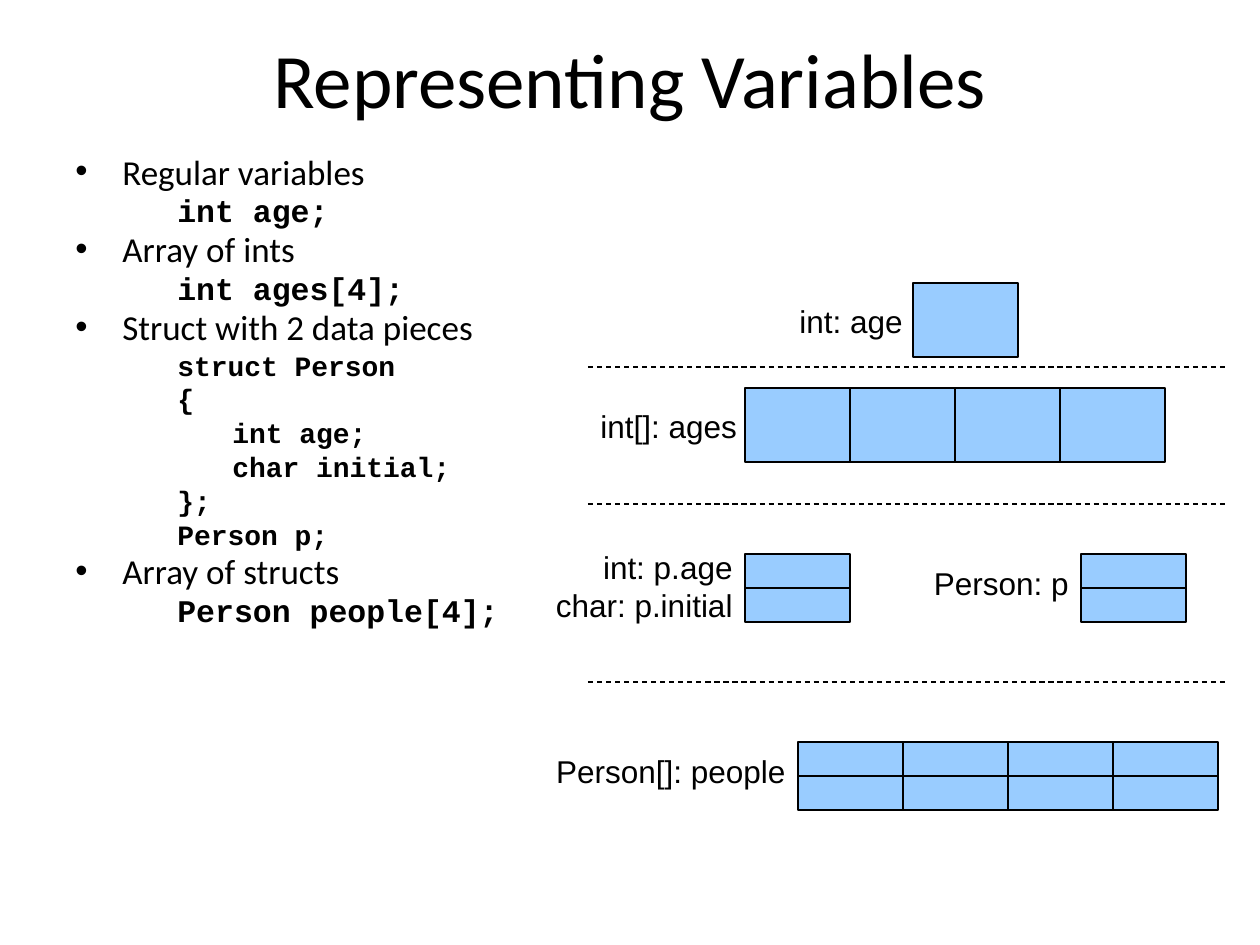
"""Build a slide that pairs variable declarations with their memory layout."""
from lxml import etree
from pptx import Presentation
from pptx.dml.color import RGBColor
from pptx.enum.dml import MSO_LINE
from pptx.enum.shapes import MSO_CONNECTOR, MSO_SHAPE
from pptx.enum.text import MSO_ANCHOR, PP_ALIGN
from pptx.oxml.ns import qn
from pptx.util import Pt

LEFT, RIGHT, CENTER = PP_ALIGN.LEFT, PP_ALIGN.RIGHT, PP_ALIGN.CENTER
MIDDLE, TOP = MSO_ANCHOR.MIDDLE, MSO_ANCHOR.TOP
RECTANGLE, STRAIGHT, DASH = MSO_SHAPE.RECTANGLE, MSO_CONNECTOR.STRAIGHT, MSO_LINE.DASH
PX = 914400 // 126
COLORS = {"text": "000000", "cell": "99CCFF", "line": "000000"}

TITLE = "Representing Variables"
TITLE_BOX = (63, 29, 1134, 97)
OUTLINE_BOX = (63, 152, 1134, 692)
OUTLINE = [
    ("topic", "Regular variables"),
    ("code", "int age;"),
    ("topic", "Array of ints"),
    ("code", "int ages[4];"),
    ("topic", "Struct with 2 data pieces"),
    ("struct", "struct Person"),
    ("struct", "{"),
    ("member", "int age;"),
    ("member", "char initial;"),
    ("struct", "};"),
    ("struct", "Person p;"),
    ("topic", "Array of structs"),
    ("code", "Person people[4];"),
]
STYLES = {
    "topic": dict(size=20, font="Calibri", margin=47, bullet="•"),
    "code": dict(size=18, font="Courier New", bold=True, margin=102),
    "struct": dict(size=16, font="Courier New", bold=True, margin=102),
    "member": dict(size=16, font="Courier New", bold=True, margin=157),
}
LABELS = [
    ("int: age", (787, 296, 136, 50), LEFT),
    ("int[]: ages", (588, 401, 168, 50), LEFT),
    ("int: p.age\nchar: p.initial", (535, 542, 210, 88), RIGHT),
    ("Person: p", (913, 558, 168, 50), RIGHT),
    ("Person[]: people", (462, 746, 336, 50), RIGHT),
]
CELL_WIDTH, VALUE_HEIGHT, FIELD_HEIGHT = 105, 74, 34
MEMORY = [
    dict(left=913, top=283, columns=1, rows=1, height=VALUE_HEIGHT),
    dict(left=745, top=388, columns=4, rows=1, height=VALUE_HEIGHT),
    dict(left=745, top=554, columns=1, rows=2, height=FIELD_HEIGHT),
    dict(left=1081, top=554, columns=1, rows=2, height=FIELD_HEIGHT),
    dict(left=798, top=742, columns=4, rows=2, height=FIELD_HEIGHT),
]
DIVIDER_LEFT, DIVIDER_RIGHT = 588, 1228
DIVIDER_TOPS = [367, 504, 682]


def emu(lengths):
    return [length * PX for length in lengths]


def color(name):
    return RGBColor.from_string(COLORS[name])


def write(paragraph, text, size=18, font="Arial", bold=False, align=LEFT,
          margin=0, bullet=None, line_spacing=1.0, before=0):
    paragraph.text = text
    paragraph.alignment = align
    paragraph.line_spacing = line_spacing
    paragraph.space_before = Pt(before)
    for run in paragraph.runs:
        run.font.size = Pt(size)
        run.font.name = font
        run.font.bold = bold
        run.font.color.rgb = color("text")
    properties = paragraph._p.get_or_add_pPr()
    properties.set("marL", str(margin * PX))
    properties.set("indent", str(-margin * PX if bullet else 0))
    if bullet:
        etree.SubElement(properties, qn("a:buFont")).set("typeface", "Arial")
        etree.SubElement(properties, qn("a:buChar")).set("char", bullet)
    else:
        etree.SubElement(properties, qn("a:buNone"))


def add_frame(slide, box):
    frame = slide.shapes.add_textbox(*emu(box)).text_frame
    frame.word_wrap = True
    frame.vertical_anchor = TOP
    return frame


def add_title(slide):
    title = slide.shapes.title
    title.left, title.top, title.width, title.height = emu(TITLE_BOX)
    title.text_frame.vertical_anchor = MIDDLE
    write(title.text_frame.paragraphs[0], TITLE, size=44, font="Calibri", align=CENTER)


def add_outline(slide):
    frame = add_frame(slide, OUTLINE_BOX)
    for index, (style, text) in enumerate(OUTLINE):
        paragraph = frame.add_paragraph() if index else frame.paragraphs[0]
        write(paragraph, text, line_spacing=0.8, before=4, **STYLES[style])


def add_memory(slide, left, top, columns, rows, height):
    for column in range(columns):
        for row in range(rows):
            box = (left + column * CELL_WIDTH, top + row * height, CELL_WIDTH, height)
            cell = slide.shapes.add_shape(RECTANGLE, *emu(box))
            cell.shadow.inherit = False
            cell.fill.solid()
            cell.fill.fore_color.rgb = color("cell")
            cell.line.color.rgb = color("line")
            cell.line.width = Pt(0.75)


def add_divider(slide, top):
    ends = (DIVIDER_LEFT, top, DIVIDER_RIGHT, top)
    divider = slide.shapes.add_connector(STRAIGHT, *emu(ends))
    divider.line.color.rgb = color("line")
    divider.line.width = Pt(0.75)
    divider.line.dash_style = DASH
    etree.SubElement(divider._element.spPr, qn("a:effectLst"))


def main():
    deck = Presentation()
    deck.slide_width, deck.slide_height = emu((1260, 945))
    slide = deck.slides.add_slide(deck.slide_layouts.get_by_name("Title Only"))
    add_title(slide)
    add_outline(slide)
    for memory in MEMORY:
        add_memory(slide, **memory)
    for text, box, align in LABELS:
        write(add_frame(slide, box).paragraphs[0], text, align=align)
    for top in DIVIDER_TOPS:
        add_divider(slide, top)
    deck.save("out.pptx")


if __name__ == "__main__":
    main()
